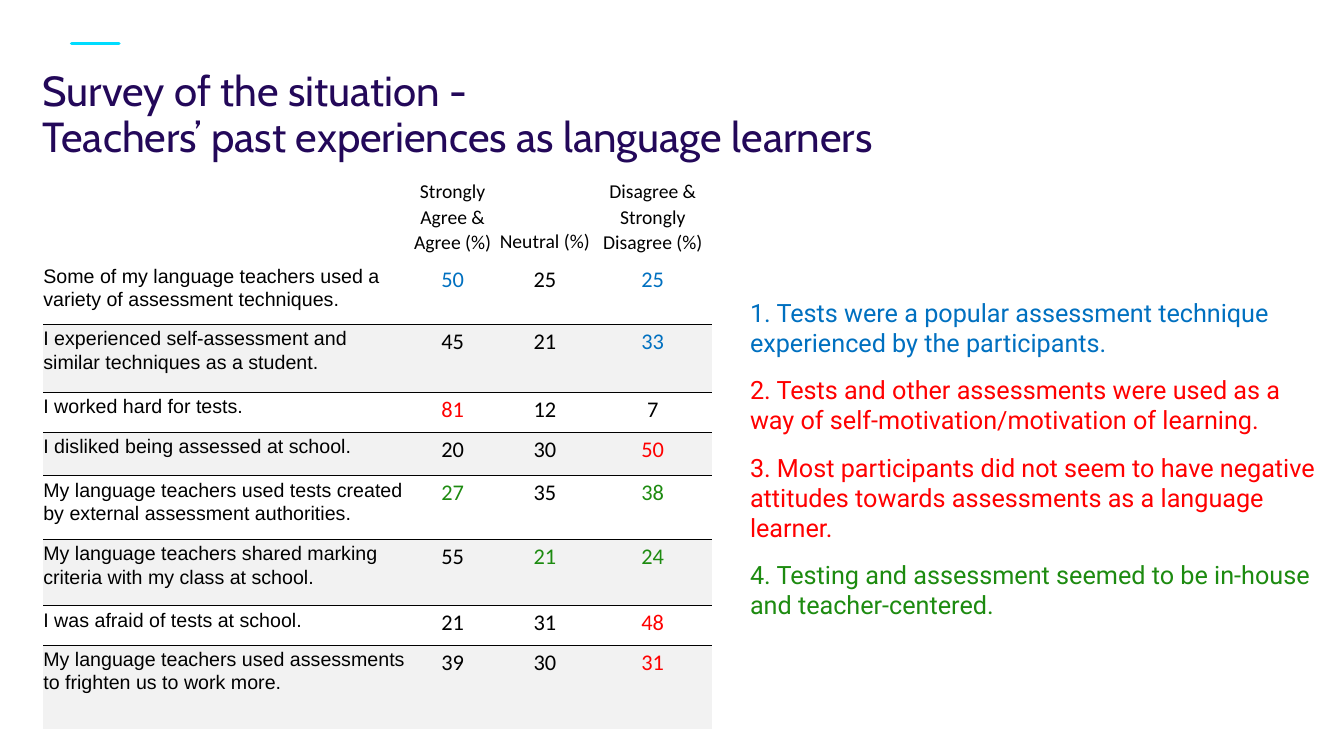
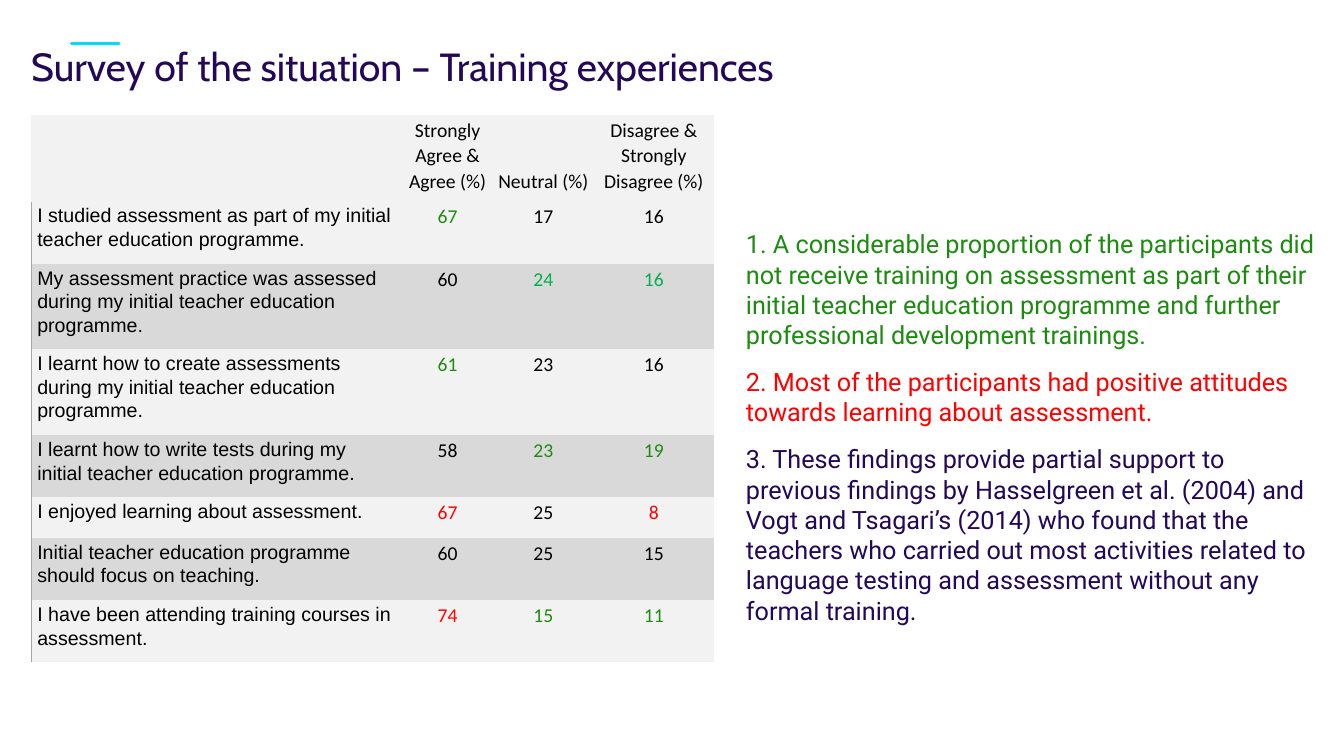
from dataclasses import dataclass

from lxml.etree import SubElement
from pptx import Presentation
from pptx.dml.color import RGBColor
from pptx.enum.shapes import MSO_CONNECTOR
from pptx.enum.text import MSO_ANCHOR, PP_ALIGN
from pptx.oxml import parse_xml
from pptx.oxml.ns import nsdecls, qn
from pptx.util import Inches, Pt

NAVY = RGBColor(0x23, 0x08, 0x59)
CYAN = RGBColor(0x00, 0xDC, 0xFF)
BLACK = RGBColor(0x00, 0x00, 0x00)
BLUE = RGBColor(0x00, 0x70, 0xC0)
RED = RGBColor(0xFF, 0x00, 0x00)
GREEN = RGBColor(0x1D, 0x8B, 0x10)
BRIGHT_GREEN = RGBColor(0x00, 0xB0, 0x50)
GREY = RGBColor(0xA6, 0xA6, 0xA6)
LIGHT_GREY = RGBColor(0xF2, 0xF2, 0xF2)
MID_GREY = RGBColor(0xD9, 0xD9, 0xD9)

TITLE_FONT, STATEMENT_FONT, NUMBER_FONT, FINDING_FONT = "Cabin", "Arial", "Calibri", "Roboto"
HEADERS = ("", "Strongly Agree & Agree (%)", "Neutral (%)", "Disagree & Strongly Disagree (%)")
PLAIN_TABLE_STYLE = "{2D5ABB26-0587-4C30-8999-92F81FD0307C}"
TIGHT_INSETS = (0, 0.02, 0.04, 0.08)
WIDE_INSETS = (0.06, 0.02, 0.1, 0.13)


@dataclass
class TableStyle:
    columns: tuple
    header_height: float
    number_size: int
    insets: tuple
    header_fill: RGBColor
    row_fills: tuple
    rule_above_shaded: bool = False
    rule_at_left: bool = False


PAST_STYLE = TableStyle((3.67, 0.82, 1.01, 1.13), 0.85, 16, TIGHT_INSETS,
                        None, (None, LIGHT_GREY), rule_above_shaded=True)
TRAINING_STYLE = TableStyle((3.72, 0.86, 1.04, 1.15), 0.85, 14, WIDE_INSETS,
                            LIGHT_GREY, (LIGHT_GREY, MID_GREY), rule_at_left=True)

# Each row: statement, height, percentages, colours of the percentages
PAST_ROWS = (
    ("Some of my language teachers used a variety of assessment techniques.",
     0.62, (50, 25, 25), (BLUE, BLACK, BLUE)),
    ("I experienced self-assessment and similar techniques as a student.",
     0.67, (45, 21, 33), (BLACK, BLACK, BLUE)),
    ("I worked hard for tests.", 0.4, (81, 12, 7), (RED, BLACK, BLACK)),
    ("I disliked being assessed at school.", 0.43, (20, 30, 50), (BLACK, BLACK, RED)),
    ("My language teachers used tests created by external assessment authorities.",
     0.63, (27, 35, 38), (GREEN, BLACK, GREEN)),
    ("My language teachers shared marking criteria with my class at school.",
     0.66, (55, 21, 24), (BLACK, GREEN, GREEN)),
    ("I was afraid of tests at school.", 0.39, (21, 31, 48), (BLACK, BLACK, RED)),
    ("My language teachers used assessments to frighten us to work more.",
     0.83, (39, 30, 31), (BLACK, BLACK, RED)),
)
TRAINING_ROWS = (
    ("I studied assessment as part of my initial teacher education programme.",
     0.61, (67, 17, 16), (GREEN, BLACK, BLACK)),
    ("My assessment practice was assessed during my initial teacher education programme.",
     0.84, (60, 24, 16), (BLACK, BRIGHT_GREEN, BRIGHT_GREEN)),
    ("I learnt how to create assessments during my initial teacher education programme.",
     0.84, (61, 23, 16), (GREEN, BLACK, BLACK)),
    ("I learnt how to write tests during my initial teacher education programme.",
     0.61, (58, 23, 19), (BLACK, GREEN, GREEN)),
    ("I enjoyed learning about assessment.", 0.4, (67, 25, 8), (RED, BLACK, RED)),
    ("Initial teacher education programme should focus on teaching.",
     0.61, (60, 25, 15), (BLACK, BLACK, BLACK)),
    ("I have been attending training courses in assessment.",
     0.61, (74, 15, 11), (RED, GREEN, GREEN)),
)

PAST_FINDINGS = (
    ("Tests were a popular assessment technique experienced by the participants.", BLUE),
    ("Tests and other assessments were used as a way of self-motivation/motivation of learning.",
     RED),
    ("Most participants did not seem to have negative attitudes towards assessments "
     "as a language learner.", RED),
    ("Testing and assessment seemed to be in-house and teacher-centered.", GREEN),
)
TRAINING_FINDINGS = (
    ("A considerable proportion of the participants did not receive training on assessment "
     "as part of their initial teacher education programme and further professional "
     "development trainings.", GREEN),
    ("Most of the participants had positive attitudes towards learning about assessment.", RED),
    ("These findings provide partial support to previous findings by Hasselgreen et al. (2004) "
     "and Vogt and Tsagari’s (2014) who found that the teachers who carried out most activities "
     "related to language testing and assessment without any formal training.", NAVY),
)


def add_run(paragraph, text, font, size, color):
    run = paragraph.add_run()
    run.text = text
    run.font.name = font
    run.font.size = Pt(size)
    run.font.color.rgb = color


def add_text_frame(slide, box):
    frame = slide.shapes.add_textbox(*map(Inches, box)).text_frame
    frame.word_wrap = True
    return frame


def add_accent(slide):
    line = slide.shapes.add_connector(
        MSO_CONNECTOR.STRAIGHT, Inches(0.71), Inches(0.43), Inches(1.18), Inches(0.43))
    line.line.color.rgb = CYAN
    line.line.width = Pt(2.4)
    line.line._get_or_add_ln().set("cap", "rnd")
    SubElement(line._element.spPr, qn("a:effectLst"))


def add_title(slide, box, lines, size):
    frame = add_text_frame(slide, box)
    frame.margin_left = frame.margin_top = frame.margin_right = frame.margin_bottom = 0
    paragraph = frame.paragraphs[0]
    paragraph.line_spacing = Pt(33)
    for index, line in enumerate(lines):
        if index:
            paragraph.add_line_break()
        add_run(paragraph, line, TITLE_FONT, size, NAVY)


def add_findings(slide, box, findings):
    """Numbered list of coloured conclusions."""
    frame = add_text_frame(slide, box)
    for index, (text, color) in enumerate(findings):
        paragraph = frame.add_paragraph() if index else frame.paragraphs[0]
        properties = paragraph._p.get_or_add_pPr()
        properties.set("marL", "0")
        properties.set("indent", "0")
        SubElement(properties, qn("a:buFont"), typeface=FINDING_FONT)
        SubElement(properties, qn("a:buAutoNum"), type="arabicPeriod")
        paragraph.space_before = Pt(6 if index else 0)
        paragraph.space_after = Pt(6)
        add_run(paragraph, " " + text, FINDING_FONT, 18, color)


def add_rule(cell, side, color, width):
    """Draw one edge of a cell; side is L, R, T or B."""
    cell._tc.get_or_add_tcPr().insert(0, parse_xml(
        f'<a:ln{side} {nsdecls("a")} w="{Pt(width)}"><a:solidFill>'
        f'<a:srgbClr val="{color}"/></a:solidFill></a:ln{side}>'))


def fill_cell(cell, text, font, size, color, fill, insets, centered=True):
    cell.margin_left, cell.margin_top, cell.margin_right, cell.margin_bottom = map(Inches, insets)
    if fill is None:
        cell.fill.background()
    else:
        cell.fill.solid()
        cell.fill.fore_color.rgb = fill
    paragraph = cell.text_frame.paragraphs[0]
    paragraph.line_spacing = 1.07
    paragraph.alignment = PP_ALIGN.CENTER if centered else PP_ALIGN.LEFT
    if text:
        add_run(paragraph, text, font, size, color)


def add_survey_table(slide, left, top, style, rows):
    heights = [style.header_height] + [row[1] for row in rows]
    table = slide.shapes.add_table(
        len(heights), len(HEADERS), Inches(left), Inches(top),
        Inches(sum(style.columns)), Inches(sum(heights))).table
    table.first_row = table.horz_banding = False
    table._tbl.tblPr.find(qn("a:tableStyleId")).text = PLAIN_TABLE_STYLE
    for column, width in zip(table.columns, style.columns):
        column.width = Inches(width)
    for row, height in zip(table.rows, heights):
        row.height = Inches(height)

    for column, header in enumerate(HEADERS):
        cell = table.cell(0, column)
        cell.vertical_anchor = MSO_ANCHOR.BOTTOM
        fill_cell(cell, header, NUMBER_FONT, 14, BLACK, style.header_fill, TIGHT_INSETS)

    for index, (statement, _, values, colors) in enumerate(rows):
        cells = table.rows[index + 1].cells
        shaded = index % 2
        fill = style.row_fills[shaded]
        fill_cell(cells[0], statement, STATEMENT_FONT, 14, BLACK, fill, style.insets,
                  centered=False)
        for column, (value, color) in enumerate(zip(values, colors), start=1):
            fill_cell(cells[column], str(value), NUMBER_FONT, style.number_size, color,
                      fill, style.insets)
        if style.rule_above_shaded and shaded:
            for cell in cells:
                add_rule(cell, "T", BLACK, 0.75)
        if style.rule_at_left:
            add_rule(cells[0], "L", GREY, 1)


def new_slide(presentation):
    slide = presentation.slides.add_slide(presentation.slide_layouts[6])
    add_accent(slide)
    return slide


def build_past_experiences(presentation):
    slide = new_slide(presentation)
    add_title(slide, (0.42, 0.68, 11.97, 0.87),
              ("Survey of the situation -", "Teachers’ past experiences as language learners"), 30)
    add_findings(slide, (7.34, 2.9, 5.92, 4.26), PAST_FINDINGS)
    add_survey_table(slide, 0.43, 1.75, PAST_STYLE, PAST_ROWS)


def build_training_experiences(presentation):
    slide = new_slide(presentation)
    add_survey_table(slide, 0.31, 1.14, TRAINING_STYLE, TRAINING_ROWS)
    add_title(slide, (0.31, 0.43, 11.97, 0.87),
              ("Survey of the situation – Training experiences",), 28)
    add_findings(slide, (7.3, 2.22, 5.92, 4.46), TRAINING_FINDINGS)


def main():
    presentation = Presentation()
    presentation.slide_width = Inches(13.33)
    presentation.slide_height = Inches(7.5)
    build_past_experiences(presentation)
    build_training_experiences(presentation)
    presentation.save("out.pptx")


if __name__ == "__main__":
    main()
